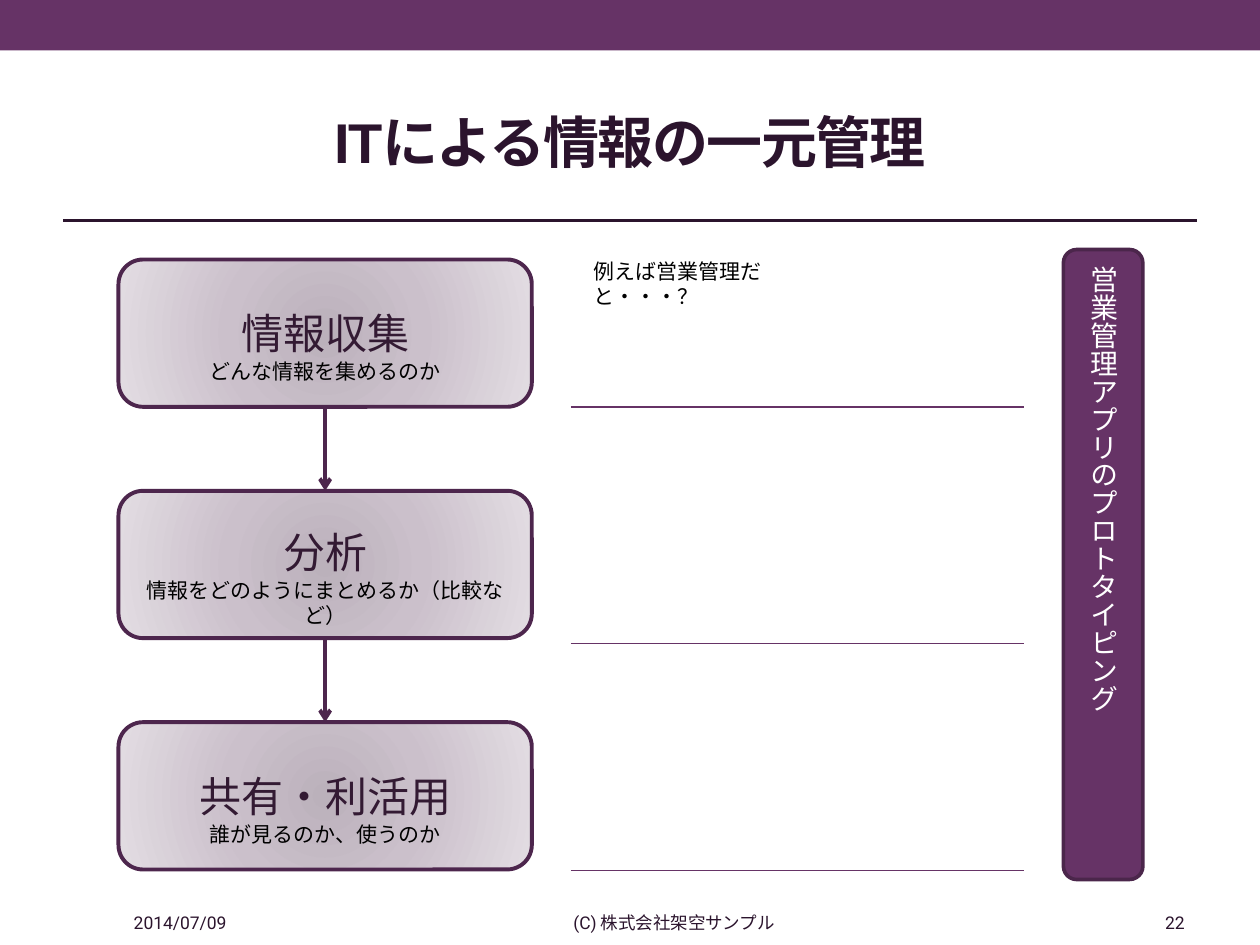
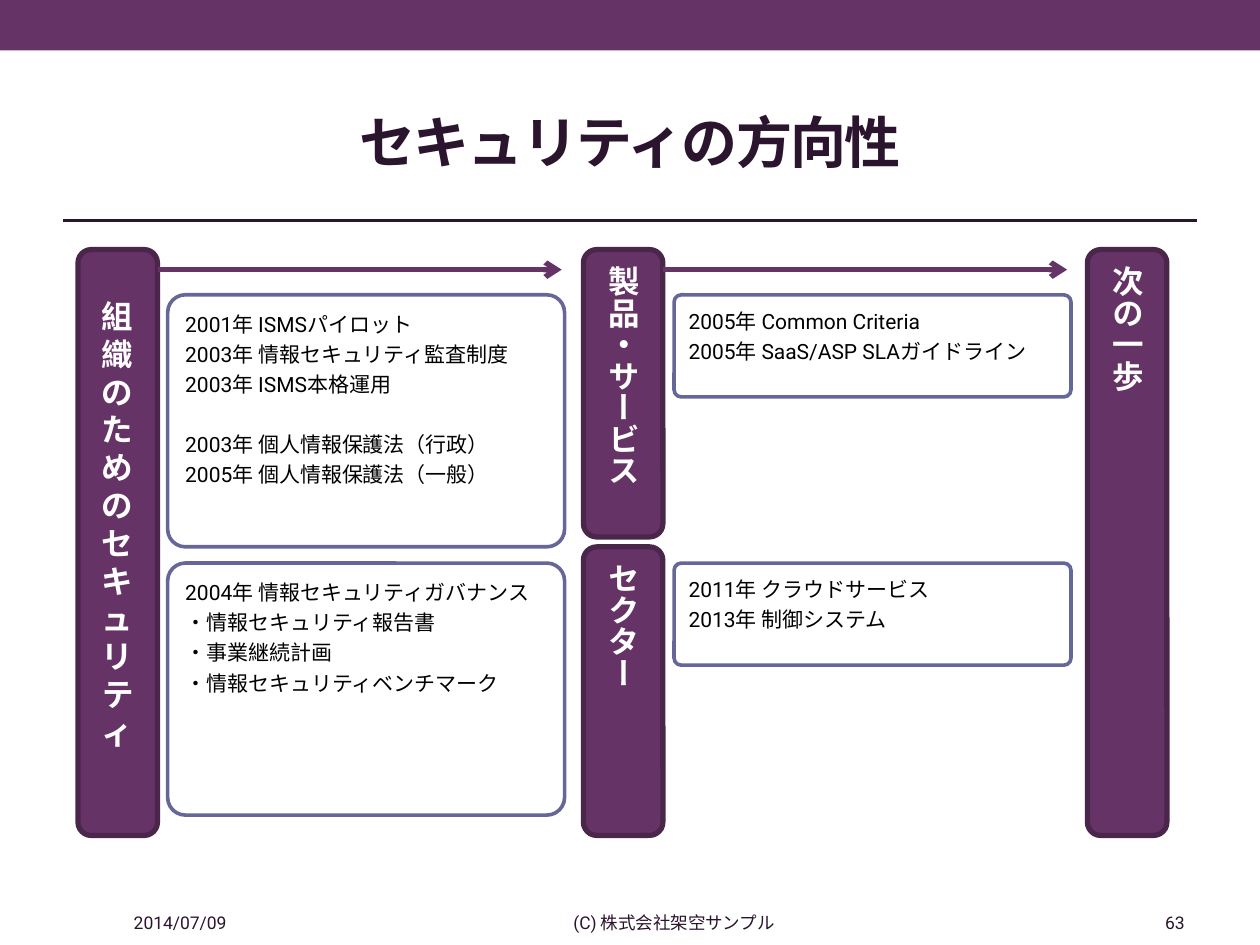
from pptx import Presentation
from pptx.util import Pt
from pptx.dml.color import RGBColor
from pptx.enum.shapes import MSO_CONNECTOR, MSO_SHAPE
from pptx.enum.text import MSO_ANCHOR, PP_ALIGN
from pptx.oxml import parse_xml
from pptx.oxml.ns import nsdecls
from lxml.etree import SubElement

# ---- Content ----
DATE = "2014/07/09"
COPYRIGHT = "(C) 株式会社架空サンプル"

FLOW_TITLE = "ITによる情報の一元管理"
STEPS = [
    ("情報収集", "どんな情報を集めるのか"),
    ("分析", "情報をどのようにまとめるか（比較など）"),
    ("共有・利活用", "誰が見るのか、使うのか"),
]
EXAMPLE = "例えば営業管理だと・・・？"
PROTOTYPE = "営業管理アプリのプロトタイピング"

SECURITY_TITLE = "セキュリティの方向性"
ORGANIZATION = "組織のためのセキュリティ"
# Topic bars: text, column, top, height
TOPICS = [
    ("製品・サービス", 1, 142.6, 164.2),
    ("セクター", 1, 312.5, 164.9),
    ("次の一歩", 2, 142.6, 334.8),
]
# Milestone boxes: column, row, height, groups of lines
MILESTONES = [
    (0, 0, 144, [["2001年 ISMSパイロット", "2003年 情報セキュリティ監査制度",
                  "2003年 ISMS本格運用"],
                 ["2003年 個人情報保護法（行政）", "2005年 個人情報保護法（一般）"]]),
    (0, 1, 144, [["2004年 情報セキュリティガバナンス", "・情報セキュリティ報告書",
                  "・事業継続計画", "・情報セキュリティベンチマーク"]]),
    (1, 0, 58.3, [["2005年 Common Criteria", "2005年 SaaS/ASP SLAガイドライン"]]),
    (1, 1, 58.3, [["2011年 クラウドサービス", "2013年 制御システム"]]),
]

# ---- Shared style ----
COLORS = {
    "purple": "663366", "ink": "2B142D", "step_line": "4D264D", "step_text": "331A33",
    "bar_line": "4B264B", "box_line": "666699", "white": "FFFFFF", "black": "000000",
}
STEP_GRADIENT = [(0, "BBB1BB"), (45, "CBC0CB"), (100, "E3DDE3")]
BAR_WIDTH, BAR_TOP = 45.4, 142.6


def rgb(name):
    return RGBColor.from_string(COLORS[name])


def write(frame, text, size=12, color="black", font="Roboto", bold=False,
          align=PP_ALIGN.LEFT, spacing=None, before=0, tracking=None):
    """Add one paragraph, filling the empty first one if there is one."""
    paragraph = frame.paragraphs[0]
    if paragraph.runs:
        paragraph = frame.add_paragraph()
    paragraph.alignment = align
    paragraph.space_before = Pt(before)
    if spacing:
        paragraph.line_spacing = spacing
    run = paragraph.add_run()
    run.text = text
    run.font.size, run.font.name, run.font.bold = Pt(size), font, bold
    run.font.color.rgb = rgb(color)
    if tracking:
        run._r.get_or_add_rPr().set("spc", str(tracking * 100))


def add_block(slide, kind, left, top, width, height, fill=None, line=None, weight=1):
    block = slide.shapes.add_shape(kind, Pt(left), Pt(top), Pt(width), Pt(height))
    block.shadow.inherit = False
    if fill:
        block.fill.solid()
        block.fill.fore_color.rgb = rgb(fill)
    if line:
        block.line.color.rgb = rgb(line)
        block.line.width = Pt(weight)
    else:
        block.line.fill.background()
    block.text_frame.word_wrap = True
    return block


def add_line(slide, x1, y1, x2, y2, color, weight, arrow=False):
    line = slide.shapes.add_connector(MSO_CONNECTOR.STRAIGHT, Pt(x1), Pt(y1), Pt(x2), Pt(y2))
    line.line.color.rgb = rgb(color)
    line.line.width = Pt(weight)
    if arrow:
        line.line._get_or_add_ln().append(
            parse_xml(f'<a:tailEnd {nsdecls("a")} type="arrow"/>'))
    line._element.spPr.append(parse_xml(f'<a:effectLst {nsdecls("a")}/>'))


def add_label(slide, text, left, top, width, height, anchor=MSO_ANCHOR.TOP, wrap=True, **fmt):
    frame = slide.shapes.add_textbox(Pt(left), Pt(top), Pt(width), Pt(height)).text_frame
    frame.word_wrap = wrap
    frame.vertical_anchor = anchor
    write(frame, text, **fmt)


def add_bar(slide, text, left, top, height, weight=3, vertical=True, **fmt):
    bar = add_block(slide, MSO_SHAPE.ROUNDED_RECTANGLE, left, top, BAR_WIDTH, height,
                    "purple", "bar_line", weight)
    frame = bar.text_frame
    frame.vertical_anchor = MSO_ANCHOR.MIDDLE
    if vertical:
        frame._txBody.bodyPr.set("vert", "eaVert")
    write(frame, text, color="white", align=PP_ALIGN.CENTER, **fmt)
    return bar


def fill_radial(block, stops):
    gradient = parse_xml(f'<a:gradFill {nsdecls("a")} rotWithShape="1"><a:gsLst/>'
                         '<a:path path="circle"><a:fillToRect l="100000" t="100000" '
                         'r="100000" b="100000"/></a:path></a:gradFill>')
    tag = "{http://schemas.openxmlformats.org/drawingml/2006/main}"
    for position, color in stops:
        stop = SubElement(gradient[0], tag + "gs", pos=str(position * 1000))
        SubElement(stop, tag + "srgbClr", val=color)
    block._element.spPr.find(tag + "prstGeom").addnext(gradient)


def start_slide(deck, title_text, number):
    slide = deck.slides.add_slide(deck.slide_layouts[5])
    add_block(slide, MSO_SHAPE.RECTANGLE, 0, 0, 720, 28.8, "purple")
    add_line(slide, 36, 126, 684, 126, "ink", 1.5)
    # Title
    title = slide.shapes.title
    title.left, title.top, title.width, title.height = Pt(36), Pt(41.8), Pt(648), Pt(77.8)
    title.text_frame.vertical_anchor = MSO_ANCHOR.MIDDLE
    write(title.text_frame, title_text, size=32, color="ink", font="Arial", bold=True,
          align=PP_ALIGN.CENTER, tracking=-1)
    # Footer
    for text, left, width, align in [(DATE, 36, 133.9, PP_ALIGN.CENTER),
                                     (COPYRIGHT, 176.4, 417.6, PP_ALIGN.CENTER),
                                     (number, 599.8, 84.2, PP_ALIGN.RIGHT)]:
        add_label(slide, text, left, 514.1, width, 25.9, anchor=MSO_ANCHOR.MIDDLE,
                  size=10, color="ink", align=align)
    return slide


def build_flow(deck):
    slide = start_slide(deck, FLOW_TITLE, "22")
    left, top, width, height, pitch = 67.7, 148.3, 236.2, 84.2, 132.2
    center = left + width / 2
    # Steps joined by arrows
    for i, (heading, question) in enumerate(STEPS):
        y = top + i * pitch
        step = add_block(slide, MSO_SHAPE.ROUNDED_RECTANGLE, left, y, width, height,
                         line="step_line", weight=2.25)
        fill_radial(step, STEP_GRADIENT)
        step.text_frame.vertical_anchor = MSO_ANCHOR.MIDDLE
        write(step.text_frame, heading, size=24, color="step_text", font="Arial",
              align=PP_ALIGN.CENTER, spacing=1.5)
        write(step.text_frame, question, font="Arial", align=PP_ALIGN.CENTER)
        if i:
            add_line(slide, center, y - pitch + height, center, y, "step_line", 2.25, arrow=True)
    # Example area with writing rules
    add_label(slide, EXAMPLE, 331.9, 144, 147.6, 21.6, wrap=False, font="Arial")
    for y in (232.6, 367.9, 497.5):
        add_line(slide, 326.2, y, 585.4, y, "purple", 0.75)
    add_bar(slide, PROTOTYPE, 607.7, BAR_TOP, 360, weight=2.08, size=16, font="Arial")


def build_security(deck):
    slide = start_slide(deck, SECURITY_TITLE, "63")
    bar_lefts = (44.6, 333.4, 621.4)
    box_lefts, box_tops = (95.8, 385.2), (168.5, 321.8)
    # Bars
    organization = add_bar(slide, ORGANIZATION, bar_lefts[0], BAR_TOP, 334.8,
                           vertical=False, size=18, bold=True)
    organization.text_frame.margin_bottom = Pt(25)
    for text, column, top, height in TOPICS:
        add_bar(slide, text, bar_lefts[column], top, height, size=18, bold=True)
    # Milestones
    for column, row, height, groups in MILESTONES:
        box = add_block(slide, MSO_SHAPE.ROUNDED_RECTANGLE, box_lefts[column], box_tops[row],
                        226.8, height, "white", "box_line", 2.08)
        box.adjustments[0] = 0.07
        box.text_frame.vertical_anchor = MSO_ANCHOR.TOP
        for g, group in enumerate(groups):
            for i, milestone in enumerate(group):
                write(box.text_frame, milestone, spacing=1.2, before=17 if g and not i else 0)
    # Arrows between the columns
    for left in bar_lefts[:2]:
        start = left + BAR_WIDTH
        add_line(slide, start, 154.1, start + 231, 154.1, "purple", 3, arrow=True)


def main():
    deck = Presentation()
    deck.slide_width, deck.slide_height = Pt(720), Pt(540)
    build_flow(deck)
    build_security(deck)
    deck.save("out.pptx")


if __name__ == "__main__":
    main()
